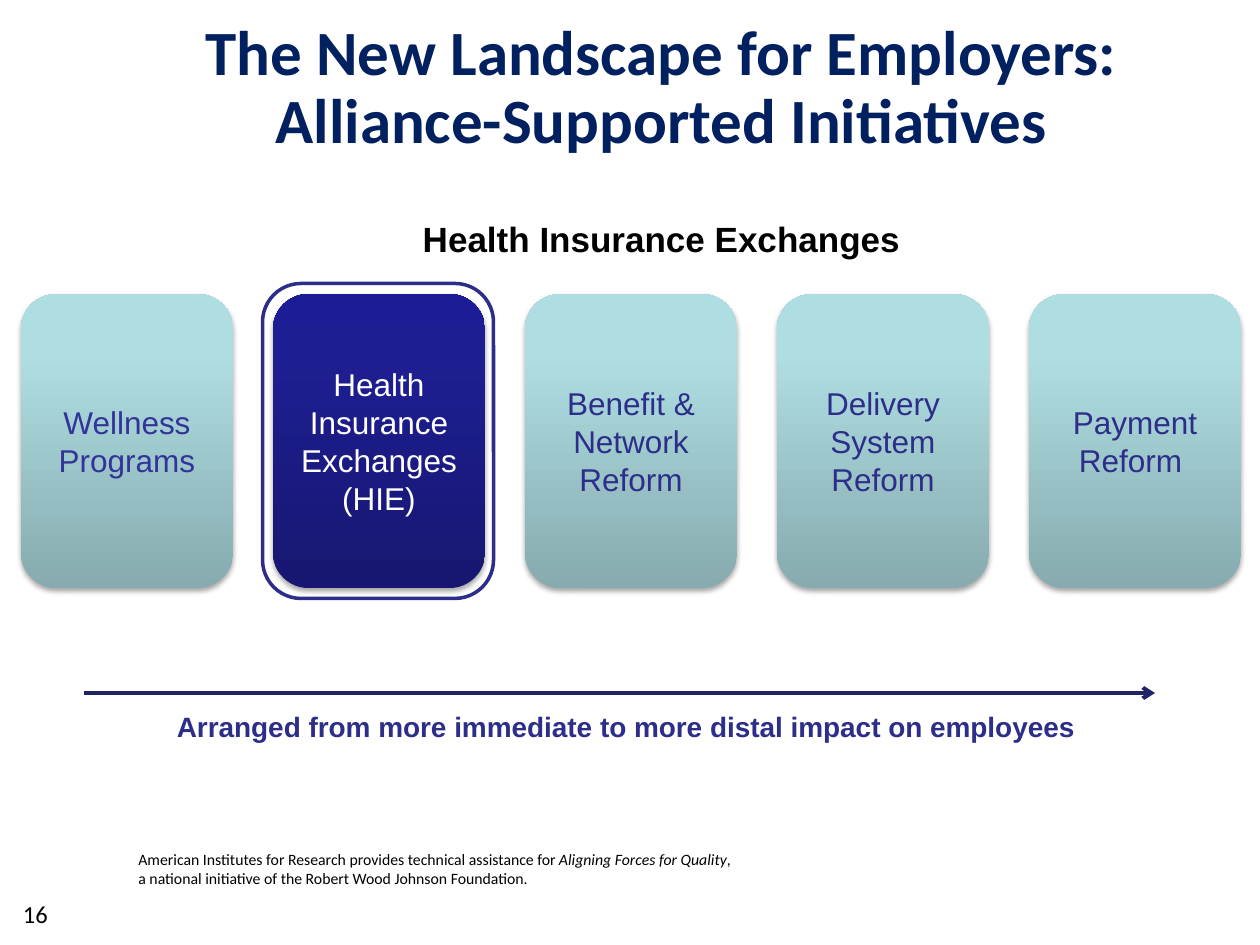
from lxml.etree import SubElement
from pptx import Presentation
from pptx.dml.color import RGBColor
from pptx.enum.shapes import MSO_CONNECTOR, MSO_SHAPE
from pptx.enum.text import MSO_ANCHOR, PP_ALIGN
from pptx.oxml import parse_xml
from pptx.oxml.ns import nsdecls, qn
from pptx.util import Pt

PX = 914400 // 120
NAVY = "2D2D8A"
TEAL_STOPS = [(0, "87ABAE"), (80, "AFDEE2"), (100, "AFE0E4")]
BLUE_STOPS = [(0, "171771"), (80, "1E1E93"), (100, "1C1C96")]


def paint(color_format, value):
    color_format.rgb = RGBColor.from_string(value)


def write(frame, text, size, font, color, bold=False, align=PP_ALIGN.CENTER, anchor=MSO_ANCHOR.BOTTOM):
    frame.word_wrap = True
    frame.vertical_anchor = anchor
    frame.text = text
    for paragraph in frame.paragraphs:
        paragraph.alignment = align
        paragraph.font.size = Pt(size)
        for run in paragraph.runs:
            run.font.size = Pt(size)
            run.font.name = font
            run.font.bold = bold
            paint(run.font.color, color)


prs = Presentation()
prs.slide_width, prs.slide_height = 1200 * PX, 900 * PX
slide = prs.slides.add_slide(prs.slide_layouts[6])
shapes = slide.shapes

captions = [
    ((60, 10, 1140, 150), "The New Landscape for Employers:\vAlliance-Supported Initiatives",
     36, "Calibri", "002060", True, PP_ALIGN.CENTER, MSO_ANCHOR.MIDDLE),
    ((140, 200, 980, 53), "Health Insurance Exchanges", 20, "Arial", "000000", True),
    ((140, 670, 920, 44), "Arranged from more immediate to more distal impact on employees ",
     16, "Arial", NAVY, True),
    ((10, 830, 70, 60), "16", 14, "Calibri", "000000", False, PP_ALIGN.LEFT),
]
for box, *style in captions:
    caption = shapes.add_textbox(*(length * PX for length in box))
    write(caption.text_frame, *style)
    if style[2] == "Calibri" and style[4]:
        caption.text_frame.paragraphs[0].line_spacing = 0.9

credit = shapes.add_textbox(120 * PX, 803 * PX, 640 * PX, 48 * PX).text_frame
write(credit, "American Institutes for Research provides technical assistance for ",
      9, "Calibri", "000000", align=PP_ALIGN.LEFT)
credit_line = credit.paragraphs[0]
for part, italic in [("Aligning Forces for Quality", True), (", ", False), (None, False),
                     ("a national initiative of the Robert Wood Johnson Foundation.", False)]:
    if part is None:
        credit_line.add_line_break()
        continue
    run = credit_line.add_run()
    run.text = part
    run.font.size = Pt(9)
    run.font.name = "Calibri"
    run.font.italic = italic
    paint(run.font.color, "000000")

initiatives = [
    ("Wellness Programs", TEAL_STOPS, "333399"),
    ("Health Insurance Exchanges\n(HIE)", BLUE_STOPS, "FFFFFF"),
    ("Benefit & Network Reform", TEAL_STOPS, NAVY),
    ("Delivery System Reform", TEAL_STOPS, NAVY),
    ("Payment Reform ", TEAL_STOPS, NAVY),
]
for index, (label, stops, color) in enumerate(initiatives):
    card = shapes.add_shape(MSO_SHAPE.ROUNDED_RECTANGLE,
                            (20 + 240 * index) * PX, 280 * PX, 202 * PX, 280 * PX)
    card.line.fill.background()
    stop_xml = "".join(f'<a:gs pos="{pos * 1000}"><a:srgbClr val="{value}"/></a:gs>'
                       for pos, value in stops)
    properties = card._element.spPr
    properties.find(qn("a:prstGeom")).addnext(parse_xml(
        f'<a:gradFill {nsdecls("a")} rotWithShape="1"><a:gsLst>{stop_xml}</a:gsLst>'
        '<a:lin ang="16200000" scaled="0"/></a:gradFill>'))
    properties.append(parse_xml(
        f'<a:effectLst {nsdecls("a")}><a:outerShdw blurRad="{Pt(3.1)}" dist="{Pt(1.8)}" '
        'dir="5400000" rotWithShape="0"><a:srgbClr val="000000"><a:alpha val="35000"/>'
        '</a:srgbClr></a:outerShdw></a:effectLst>'))
    write(card.text_frame, label, 18, "Arial", color, anchor=MSO_ANCHOR.MIDDLE)

highlight = shapes.add_shape(MSO_SHAPE.ROUNDED_RECTANGLE, 250 * PX, 270 * PX, 220 * PX, 300 * PX)
highlight.shadow.inherit = False
highlight.fill.background()
highlight.line.width = Pt(2)
paint(highlight.line.color, NAVY)

impact_arrow = shapes.add_connector(MSO_CONNECTOR.STRAIGHT, 80 * PX, 660 * PX, 1100 * PX, 660 * PX)
impact_arrow.line.width = Pt(2.25)
paint(impact_arrow.line.color, "222267")
SubElement(impact_arrow.line._get_or_add_ln(), qn("a:tailEnd"), type="arrow")
SubElement(impact_arrow._element.spPr, qn("a:effectLst"))

prs.save("out.pptx")
